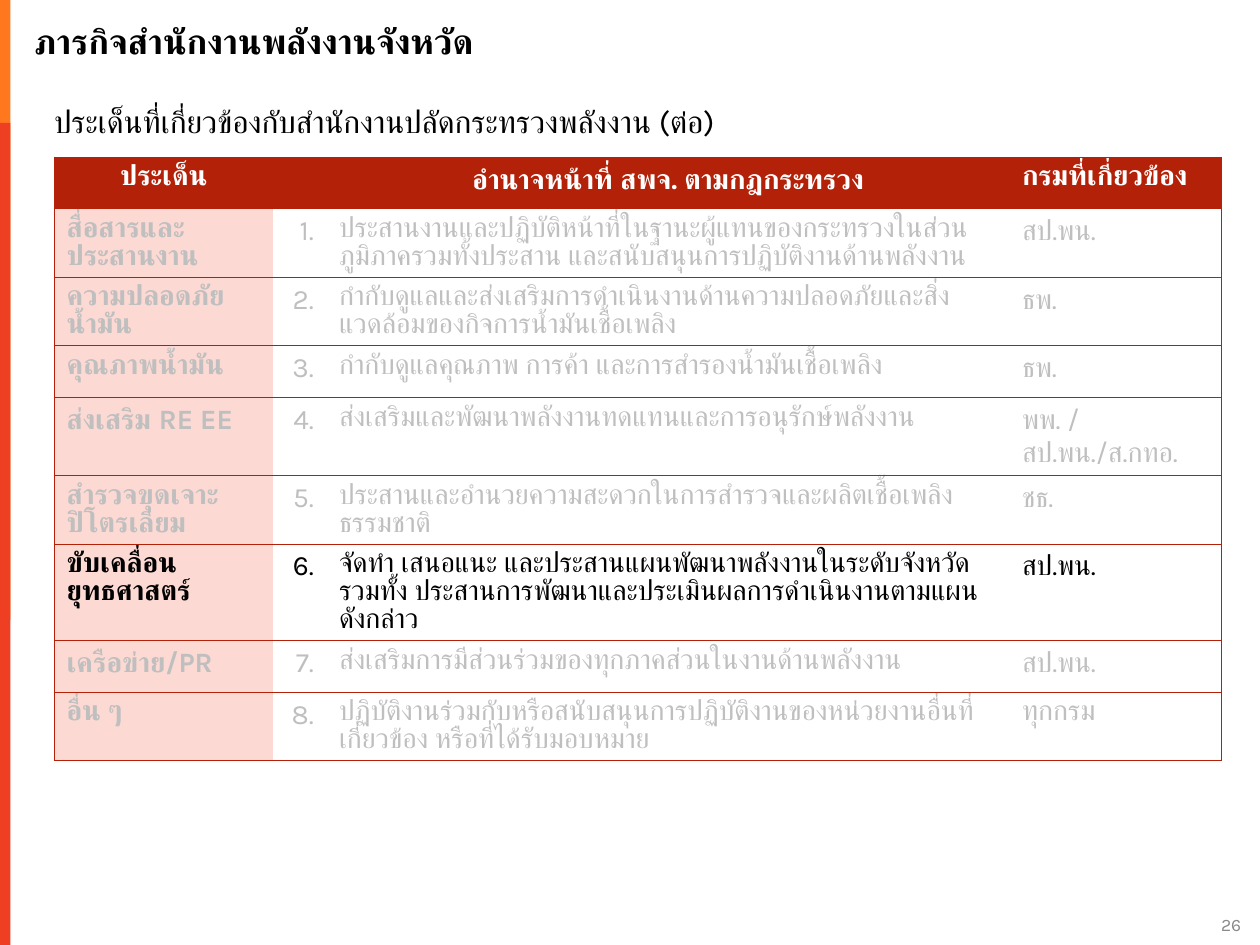
import pptx
import pptx.util
import pptx.dml.color
import pptx.enum.shapes
import pptx.enum.text
from dataclasses import dataclass
from lxml import etree
from pptx.oxml.ns import qn

Cm = pptx.util.Cm
Pt = pptx.util.Pt
RGB = pptx.dml.color.RGBColor
Align = pptx.enum.text.PP_ALIGN
Anchor = pptx.enum.text.MSO_ANCHOR

FONT = "Karla"
BLACK = RGB(0x00, 0x00, 0x00)
WHITE = RGB(0xFF, 0xFF, 0xFF)
GREY = RGB(0xBF, 0xBF, 0xBF)
DIM = RGB(0x89, 0x89, 0x89)
RED = RGB(0xB3, 0x21, 0x09)
PINK = RGB(0xFC, 0xD9, 0xD3)
ORANGE = RGB(0xFF, 0x78, 0x1E)
FLAME = RGB(0xEE, 0x3F, 0x22)

NO_INSET = dict.fromkeys(
    ("margin_left", "margin_top", "margin_right", "margin_bottom"), 0)


@dataclass
class Bar:
    top: float
    height: float
    color: RGB


@dataclass
class Label:
    text: str
    box: tuple
    size: int
    color: RGB = BLACK
    bold: bool = False
    align: Align = Align.LEFT
    anchor: Anchor = Anchor.TOP
    wrap: bool = True
    line: float | None = None


@dataclass
class Duty:
    topic: str
    task: str
    unit: str
    color: RGB = GREY


BARS = [Bar(0, 12.5, ORANGE), Bar(2.48, 16.57, FLAME)]

LABELS = [
    Label("26", (24.59, 18.47, 0.43, 0.38), 10, DIM, align=Align.RIGHT,
          anchor=Anchor.BOTTOM, wrap=False),
    Label("ภารกิจสำนักงานพลังงานจังหวัด", (0.69, 0.1, 24.71, 1.42), 20,
          bold=True, anchor=Anchor.MIDDLE),
    Label("ประเด็นที่เกี่ยวข้องกับสำนักงานปลัดกระทรวงพลังงาน (ต่อ)",
          (1.09, 1.9, 23.93, 1.55), 18, line=1.22),
]

HEAD = ["ประเด็น", "", "อำนาจหน้าที่ สพจ. ตามกฎกระทรวง", "กรมที่เกี่ยวข้อง"]
DUTIES = [
    Duty("สื่อสารและประสานงาน",
         "ประสานงานและปฏิบัติหน้าที่ในฐานะผู้แทนของกระทรวงในส่วนภูมิภาครวมทั้งประสาน "
         "และสนับสนุนการปฏิบัติงานด้านพลังงาน", "สป.พน."),
    Duty("ความปลอดภัย\nน้ำมัน",
         "กํากับดูแลและส่งเสริมการดําเนินงานด้านความปลอดภัยและสิ่งแวดล้อมของกิจการน้ำมันเชื้อเพลิง",
         "ธพ."),
    Duty("คุณภาพน้ำมัน",
         "กํากับดูแลคุณภาพ การค้า และการสํารองน้ำมันเชื้อเพลิง", "ธพ."),
    Duty("ส่งเสริม RE EE",
         "ส่งเสริมและพัฒนาพลังงานทดแทนและการอนุรักษ์พลังงาน",
         "พพ. / สป.พน./ส.กทอ."),
    Duty("สำรวจขุดเจาะ\nปิโตรเลียม",
         "ประสานและอํานวยความสะดวกในการสํารวจและผลิตเชื้อเพลิงธรรมชาติ", "ชธ."),
    Duty("ขับเคลื่อนยุทธศาสตร์",
         "จัดทำ เสนอแนะ และประสานแผนพัฒนาพลังงานในระดับจังหวัด รวมทั้ง "
         "ประสานการพัฒนาและประเมินผลการดําเนินงานตามแผนดังกล่าว", "สป.พน.", BLACK),
    Duty("เครือข่าย/PR",
         "ส่งเสริมการมีส่วนร่วมของทุกภาคส่วนในงานด้านพลังงาน", "สป.พน."),
    Duty("อื่น ๆ",
         "ปฏิบัติงานร่วมกับหรือสนับสนุนการปฏิบัติงานของหน่วยงานอื่นที่เกี่ยวข้อง "
         "หรือที่ได้รับมอบหมาย", "ทุกกรม"),
]
COLS = [4.42, 1.07, 13.77, 4.27]
ROW = 1.04


def style(obj, form: dict) -> None:
    for key, value in form.items():
        setattr(obj, key, value)


def write(frame, text: str, size: int, color: RGB, bold: bool,
          align: Align) -> None:
    para = frame.paragraphs[0]
    para.text = text
    para.alignment = align
    for run in para.runs:
        style(run.font, {"name": FONT, "size": Pt(size), "bold": bold})
        run.font.color.rgb = color


def add_bar(slide, bar: Bar) -> None:
    shape = slide.shapes.add_shape(
        pptx.enum.shapes.MSO_SHAPE.RECTANGLE,
        0, Cm(bar.top), Cm(0.21), Cm(bar.height))
    shape.shadow.inherit = False
    shape.fill.solid()
    shape.fill.fore_color.rgb = bar.color
    shape.line.fill.background()


def add_label(slide, label: Label) -> None:
    frame = slide.shapes.add_textbox(*map(Cm, label.box)).text_frame
    style(frame, NO_INSET | {"word_wrap": label.wrap,
                             "vertical_anchor": label.anchor})
    write(frame, label.text, label.size, label.color, label.bold, label.align)
    frame.paragraphs[0].line_spacing = label.line


def edge(cell, sides: str) -> None:
    """Rule the named sides (L, R, T, B) in red and clear the others."""
    props = cell._tc.get_or_add_tcPr()
    for side in "LRTB":
        line = etree.SubElement(props, qn(f"a:ln{side}"), w=str(Pt(0.75)))
        if side in sides:
            fill = etree.SubElement(line, qn("a:solidFill"))
            etree.SubElement(fill, qn("a:srgbClr"), val=str(RED))
        else:
            etree.SubElement(line, qn("a:noFill"))


def paint(cell, color: RGB | None) -> None:
    if color is None:
        cell.fill.background()
    else:
        cell.fill.solid()
        cell.fill.fore_color.rgb = color


def add_grid(slide) -> None:
    count = len(DUTIES) + 1
    table = slide.shapes.add_table(
        count, len(COLS), Cm(1.09), Cm(3.17),
        Cm(sum(COLS)), Cm(ROW * count)).table
    style(table, {"first_row": False, "horz_banding": False})
    for col, width in zip(table.columns, COLS):
        col.width = Cm(width)
    for row in table.rows:
        row.height = Cm(ROW)

    outer = ["LTB", "TB", "TB", "RTB"]
    center, left = Align.CENTER, Align.LEFT
    for c, text in enumerate(HEAD):
        cell = table.cell(0, c)
        edge(cell, outer[c])
        paint(cell, RED)
        write(cell.text_frame, text, 16, WHITE, True,
              left if c == 3 else center)
    for r, duty in enumerate(DUTIES, 1):
        texts = [duty.topic, f"{r}.", duty.task, duty.unit]
        for c, text in enumerate(texts):
            cell = table.cell(r, c)
            edge(cell, outer[c])
            paint(cell, PINK if c == 0 else None)
            write(cell.text_frame, text, 16, duty.color, c == 0,
                  Align.RIGHT if c == 1 else left)


def main() -> None:
    deck = pptx.Presentation()
    style(deck, {"slide_width": Cm(25.4), "slide_height": Cm(19.05)})
    slide = deck.slides.add_slide(deck.slide_layouts[6])
    for bar in BARS:
        add_bar(slide, bar)
    add_grid(slide)
    for label in LABELS:
        add_label(slide, label)
    deck.save("out.pptx")


if __name__ == "__main__":
    main()
